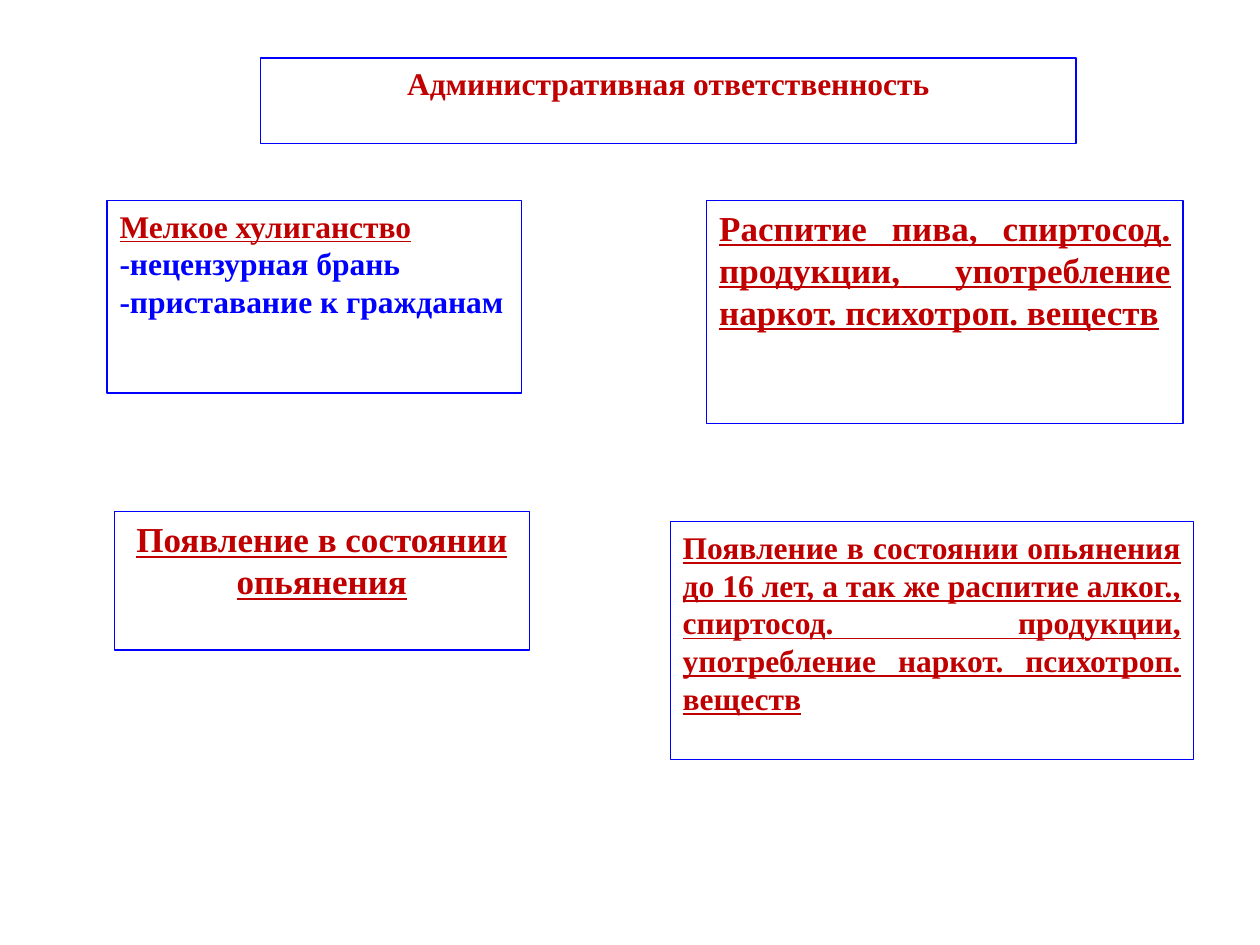
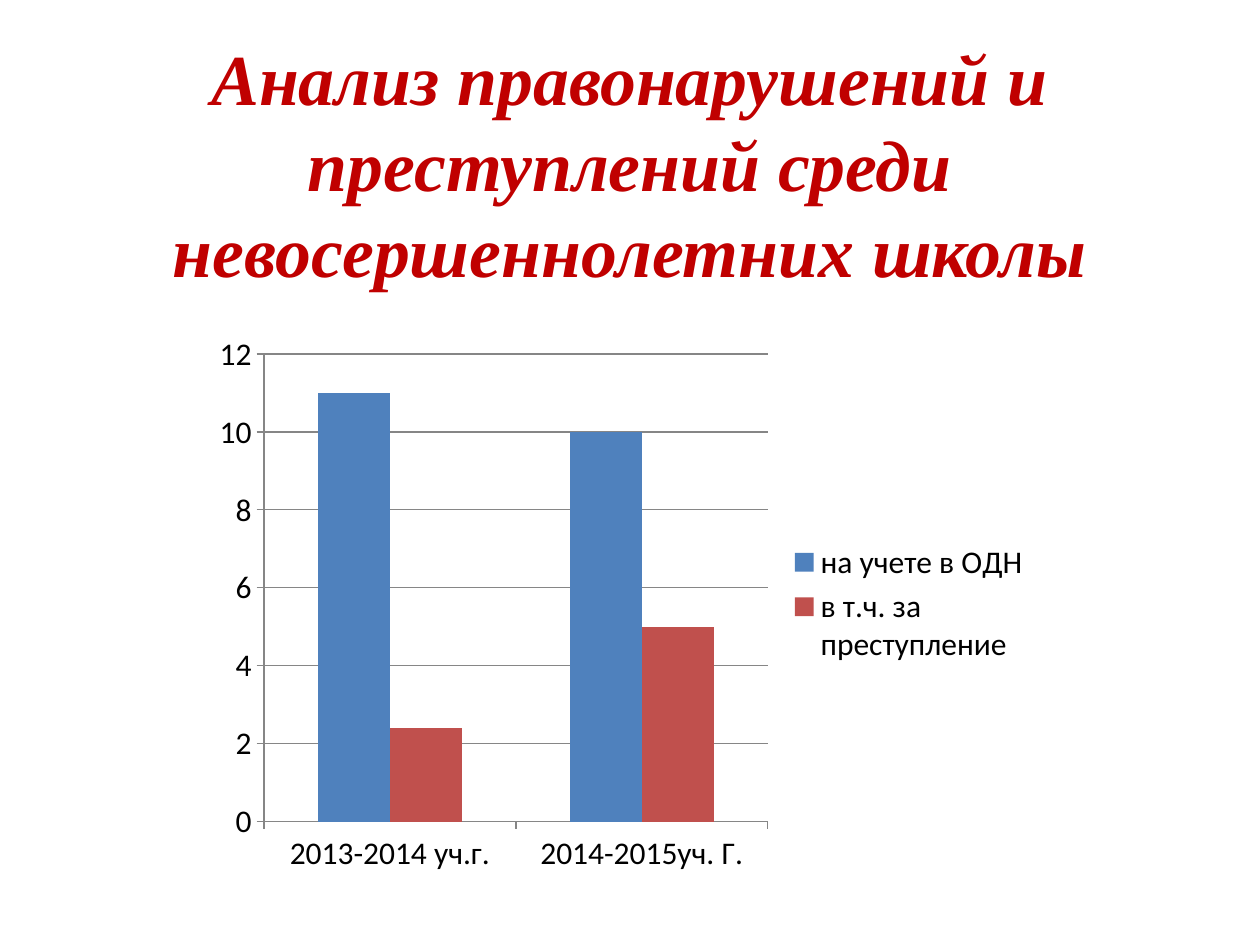
import pptx
import pptx.chart.data
import pptx.dml.color
import pptx.enum.chart
import pptx.enum.shapes
import pptx.enum.text
import pptx.util

Inches = pptx.util.Inches
Pt = pptx.util.Pt
RGBColor = pptx.dml.color.RGBColor
ALIGN = pptx.enum.text.PP_ALIGN
ANCHOR = pptx.enum.text.MSO_ANCHOR

RED = RGBColor(0xC0, 0x00, 0x00)
BLUE = RGBColor(0x00, 0x00, 0xFF)
WHITE = RGBColor(0xFF, 0xFF, 0xFF)
BLACK = RGBColor(0x00, 0x00, 0x00)
GREY = RGBColor(0x86, 0x86, 0x86)
BARS = [RGBColor(0x4F, 0x81, 0xBD), RGBColor(0xC0, 0x50, 0x4D)]
SERIF = "Times New Roman"


def write(frame, text, size=18, color=RED, align=ALIGN.LEFT,
          under=False, italic=False, anchor=ANCHOR.TOP):
    """Add a paragraph, using the first one while it is empty."""
    frame.word_wrap = True
    frame.auto_size = pptx.enum.text.MSO_AUTO_SIZE.NONE
    frame.vertical_anchor = anchor
    para = frame.paragraphs[0] if not frame.text else frame.add_paragraph()
    para.alignment = align
    run = para.add_run()
    run.text = text
    font = run.font
    font.name, font.size, font.bold = SERIF, Pt(size), True
    font.italic, font.underline = italic, under
    font.color.rgb = color


def frame_box(shape, area):
    """Place a shape and give it the white fill and blue outline."""
    shape.left, shape.top, shape.width, shape.height = map(Inches, area)
    shape.fill.solid()
    shape.fill.fore_color.rgb = WHITE
    shape.line.color.rgb = BLUE
    shape.line.width = Pt(0.75)


deck = pptx.Presentation()
deck.slide_width, deck.slide_height = Inches(10), Inches(7.5)
layout = deck.slide_layouts[5]

# Slide 1: kinds of administrative liability
slide = deck.slides.add_slide(layout)
title = slide.shapes.title
frame_box(title, (2.07, 0.46, 6.47, 0.68))
write(title.text_frame, "Административная ответственность", align=ALIGN.CENTER)

cards = [
    ((0.85, 1.59, 3.29, 1.53), 18, ALIGN.LEFT, "Мелкое хулиганство",
     ["-нецензурная брань", "-приставание к гражданам"]),
    ((5.61, 1.59, 3.78, 1.77), 20, ALIGN.JUSTIFY,
     "Распитие пива, спиртосод. продукции, употребление наркот. "
     "психотроп. веществ", []),
    ((0.91, 4.06, 3.29, 1.1), 20, ALIGN.CENTER,
     "Появление в состоянии опьянения", []),
    ((5.32, 4.14, 4.15, 1.89), 18, ALIGN.JUSTIFY,
     "Появление в состоянии опьянения до 16 лет, а так же распитие алког., "
     "спиртосод. продукции, употребление наркот. психотроп. веществ", []),
]
for area, size, align, head, items in cards:
    card = slide.shapes.add_shape(
        pptx.enum.shapes.MSO_SHAPE.RECTANGLE, *map(Inches, area))
    card.shadow.inherit = False
    frame_box(card, area)
    write(card.text_frame, head, size=size, align=align, under=True)
    for item in items:
        write(card.text_frame, item, size=size, align=align, color=BLUE)

# Slide 2: title
slide = deck.slides.add_slide(layout)
title = slide.shapes.title
title.left, title.top = Inches(0.5), Inches(0.3)
title.width, title.height = Inches(9), Inches(1.98)
write(title.text_frame,
      "Анализ правонарушений и преступлений среди невосершеннолетних школы",
      size=41, align=ALIGN.CENTER, italic=True, anchor=ANCHOR.MIDDLE)

# Slide 2: column chart
data = pptx.chart.data.CategoryChartData()
data.categories = ["2013-2014 уч.г.", "2014-2015уч. Г."]
data.add_series("на учете в ОДН", [11, 10])
data.add_series("в т.ч. за преступление", [2.4, 5])
chart = slide.shapes.add_chart(
    pptx.enum.chart.XL_CHART_TYPE.COLUMN_CLUSTERED,
    Inches(1.61), Inches(2.57), Inches(6.67), Inches(4.44), data).chart
chart.has_title = False
chart.font.name, chart.font.size = "Calibri", Pt(18)
chart.font.color.rgb = BLACK
chart.has_legend = True
chart.legend.position = pptx.enum.chart.XL_LEGEND_POSITION.RIGHT
chart.legend.include_in_layout = False

plot = chart.plots[0]
plot.gap_width, plot.overlap = 150, 0
plot.vary_by_categories = False
for series, color in zip(plot.series, BARS):
    series.format.fill.solid()
    series.format.fill.fore_color.rgb = color

scale = chart.value_axis
scale.minimum_scale, scale.maximum_scale, scale.major_unit = 0, 12, 2
scale.has_major_gridlines = True
for line in (scale.major_gridlines.format.line, scale.format.line,
             chart.category_axis.format.line):
    line.color.rgb = GREY
    line.width = Pt(0.75)

deck.save("out.pptx")
